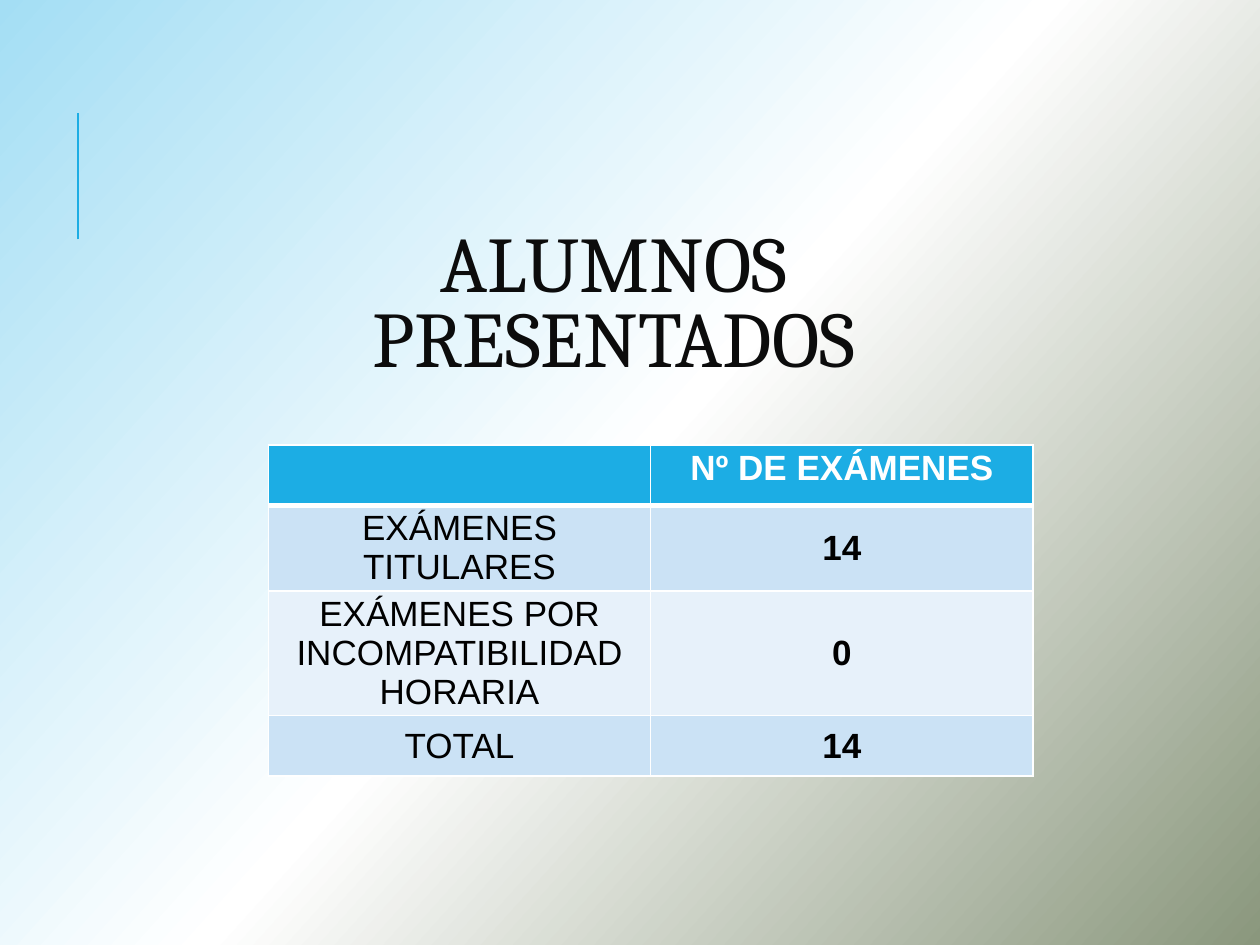
from lxml import etree
from pptx import Presentation
from pptx import util as u
from pptx.dml.color import RGBColor
from pptx.enum import shapes, text
from pptx.oxml import ns, parse_xml

BLUE, WHITE = "1CADE4", "FFFFFF"
HEADERS = ["", "Nº DE EXÁMENES"]
EXAMS = [
    ["EXÁMENES TITULARES", "14"],
    ["EXÁMENES POR INCOMPATIBILIDAD HORARIA", "0"],
    ["TOTAL", "14"],
]
ROW_HEIGHTS = [0.48, 0.44, 0.73, 0.48]


def color(value):
    return RGBColor.from_string(value)


def set_background(slide, stops, angle):
    slide.background.fill.solid()
    properties = slide.background.fill._xPr
    marks = "".join(
        f'<a:gs pos="{position * 1000}"><a:srgbClr val="{value}"/></a:gs>'
        for position, value in stops
    )
    gradient = parse_xml(
        f'<a:gradFill rotWithShape="1" {ns.nsdecls("a")}><a:gsLst>{marks}</a:gsLst>'
        f'<a:lin ang="{angle * 60000}" scaled="0"/></a:gradFill>'
    )
    properties.replace(properties.find(ns.qn("a:solidFill")), gradient)


def add_accent(slide, x, top, height):
    accent = slide.shapes.add_connector(
        shapes.MSO_CONNECTOR.STRAIGHT,
        u.Inches(x), u.Inches(top + height), u.Inches(x), u.Inches(top),
    )
    accent.line.color.rgb = color(BLUE)
    accent.line.width = u.Pt(1.5)
    etree.SubElement(accent._element.spPr, ns.qn("a:effectLst"))


def set_margins(area):
    area.margin_left = area.margin_right = u.Inches(0.06)
    area.margin_top = area.margin_bottom = u.Inches(0.03)


def format_text(paragraph, size, font, value, bold=False):
    paragraph.alignment = text.PP_ALIGN.CENTER
    for run in paragraph.runs:
        run.font.size = u.Pt(size)
        run.font.name = font
        run.font.bold = bold
        run.font.color.rgb = color(value)


def place_title(slide, left, top, width, height):
    heading = slide.shapes.title
    heading.left, heading.top = u.Inches(left), u.Inches(top)
    heading.width, heading.height = u.Inches(width), u.Inches(height)
    frame = heading.text_frame
    frame.text = "ALUMNOS PRESENTADOS"
    frame.word_wrap = True
    frame.auto_size = text.MSO_AUTO_SIZE.NONE
    frame.vertical_anchor = text.MSO_ANCHOR.MIDDLE
    set_margins(frame)
    frame.paragraphs[0].line_spacing = 0.8
    format_text(frame.paragraphs[0], 45, "Cambria", "0C0C0C")


def set_borders(cell, top, bottom):
    properties = cell._tc.get_or_add_tcPr()
    for side, width in (("L", 1), ("R", 1), ("T", top), ("B", bottom)):
        properties.append(parse_xml(
            f'<a:ln{side} w="{u.Pt(width)}" {ns.nsdecls("a")}><a:solidFill>'
            f'<a:srgbClr val="{WHITE}"/></a:solidFill></a:ln{side}>'
        ))


def add_exam_table(slide, left, top, width):
    rows = [HEADERS] + EXAMS
    table = slide.shapes.add_table(
        len(rows), len(HEADERS), u.Inches(left), u.Inches(top),
        u.Inches(width), u.Inches(sum(ROW_HEIGHTS)),
    ).table
    for row, height in zip(table.rows, ROW_HEIGHTS):
        row.height = u.Inches(height)
    for r, labels in enumerate(rows):
        is_header = r == 0
        fill = BLUE if is_header else ("CBE2F5" if r % 2 else "E7F1FA")
        for c, label in enumerate(labels):
            cell = table.cell(r, c)
            set_borders(cell, 3 if r == 1 else 1, 3 if is_header else 1)
            cell.fill.solid()
            cell.fill.fore_color.rgb = color(fill)
            set_margins(cell)
            if not is_header:
                cell.vertical_anchor = text.MSO_ANCHOR.MIDDLE
            cell.text_frame.text = label
            format_text(
                cell.text_frame.paragraphs[0], 20, "Arial",
                WHITE if is_header else "000000", is_header or c == 1,
            )


def main():
    deck = Presentation()
    deck.slide_width, deck.slide_height = u.Inches(10), u.Inches(7.5)
    slide = deck.slides.add_slide(deck.slide_layouts[5])
    set_background(slide, [(0, "A4DEF4"), (50, WHITE), (100, "8A977D")], 42)
    add_accent(slide, 0.62, 0.9, 1)
    place_title(slide, 1.88, 1.98, 5.98, 0.92)
    add_exam_table(slide, 2.13, 3.53, 6.07)
    deck.save("out.pptx")


if __name__ == "__main__":
    main()
